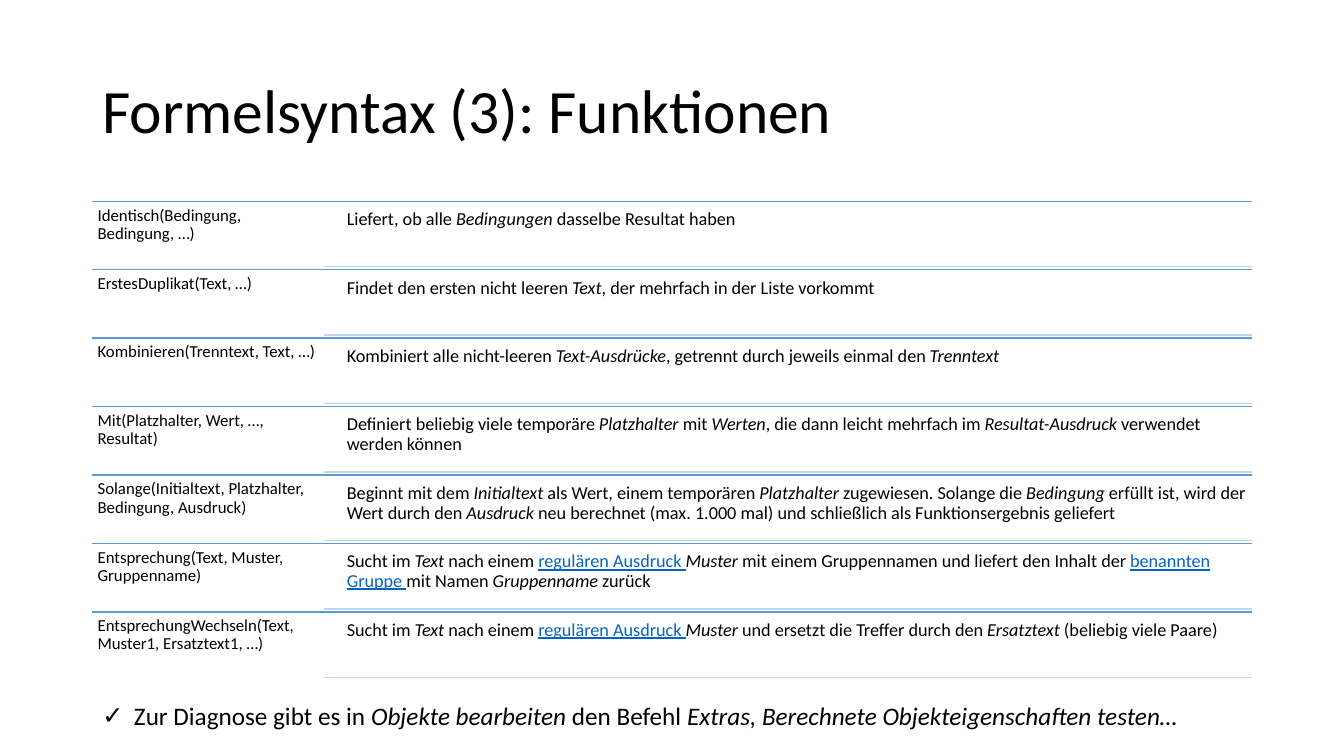
from lxml.etree import SubElement
from pptx import Presentation
from pptx.dml.color import RGBColor
from pptx.enum.shapes import MSO_CONNECTOR
from pptx.enum.text import MSO_ANCHOR, MSO_AUTO_SIZE, PP_ALIGN
from pptx.oxml.ns import qn
from pptx.util import Pt

# Content: "|" parts the runs, a leading "*" is italic, a leading "_" a link
TITLE = "Formelsyntax (3): Funktionen"
ROWS = [
    ("Identisch(Bedingung, Bedingung, …)",
     "Liefert, ob alle |*Bedingungen| dasselbe Resultat haben"),
    ("ErstesDuplikat(Text, …)",
     "Findet den ersten nicht leeren |*Text|, der mehrfach in der Liste vorkommt"),
    ("Kombinieren(Trenntext, Text, …)",
     "Kombiniert alle nicht-leeren |*Text-Ausdrücke|, getrennt durch jeweils "
     "einmal den |*Trenntext"),
    ("Mit(Platzhalter, Wert, …, Resultat)",
     "Definiert beliebig viele temporäre |*Platzhalter| mit |*Werten|, die dann "
     "leicht mehrfach im |*Resultat-Ausdruck| verwendet werden können"),
    ("Solange(Initialtext, Platzhalter, Bedingung, Ausdruck)",
     "Beginnt mit dem |*Initialtext| als Wert, einem temporären |*Platzhalter"
     "| zugewiesen. Solange die |*Bedingung| erfüllt ist, wird der Wert durch den "
     "|*Ausdruck| neu berechnet (max. 1.000 mal) und schließlich als "
     "Funktionsergebnis geliefert"),
    ("Entsprechung(Text, Muster, Gruppenname)",
     "Sucht im |*Text| nach einem |_regulären Ausdruck |*Muster |mit einem "
     "Gruppennamen und liefert den Inhalt der |_benannten Gruppe |mit Namen "
     "|*Gruppenname |zurück"),
    ("EntsprechungWechseln(Text, Muster1, Ersatztext1, …)",
     "Sucht im |*Text| nach einem |_regulären Ausdruck |*Muster| und ersetzt die "
     "Treffer durch den |*Ersatztext| (beliebig viele Paare)"),
]
HINT = ("Zur Diagnose gibt es in |*Objekte bearbeiten| den Befehl "
        "|*Extras, Berechnete Objekteigenschaften testen…")

# Format
COLORS = {"text": "000000", "link": "0563C1", "rule": "5B9BD5", "thin": "C4D5EB"}
STYLES = {"*": {"italic": True}, "_": {"underline": True}}
CELL = {"word_wrap": True, "margin_left": Pt(3.75), "margin_right": Pt(3.75),
        "margin_top": Pt(3.75), "margin_bottom": Pt(3.75)}

# Layout in points
LEFT, RIGHT, TOP, PITCH = 66, 894, 143.75, 48.9
SPLIT, INDENT = 231.6, 244
PAD, THIN = 2.4, 46.7


def color(name):
    return RGBColor.from_string(COLORS[name])


def apply(item, values):
    for key, value in values.items():
        setattr(item, key, value)


def place(shape, x, y, w, h):
    apply(shape, {"left": Pt(x), "top": Pt(y), "width": Pt(w), "height": Pt(h)})


def write(para, text, size):
    for part in text.split("|"):
        mark = part[:1] if part[:1] in STYLES else ""
        run = para.add_run()
        run.text = part[len(mark):]
        apply(run.font, {"name": "Calibri", "size": Pt(size), **STYLES.get(mark, {})})
        run.font.color.rgb = color("link" if mark == "_" else "text")


def add_cell(x, y, w, h, text, size):
    frame = slide.shapes.add_textbox(Pt(x), Pt(y), Pt(w), Pt(h)).text_frame
    apply(frame, CELL)
    para = frame.paragraphs[0]
    para.line_spacing = 0.9
    write(para, text, size)


def add_rule(x, y, name):
    line = slide.shapes.add_connector(
        MSO_CONNECTOR.STRAIGHT, Pt(x), Pt(y), Pt(RIGHT), Pt(y))
    line.line.color.rgb = color(name)
    line.line.width = Pt(1)
    SubElement(line._element.spPr, qn("a:effectLst"))


deck = Presentation()
apply(deck, {"slide_width": Pt(960), "slide_height": Pt(540)})
slide = deck.slides.add_slide(deck.slide_layouts[1])
title, body = slide.placeholders

# Title
place(title, LEFT, 28.75, RIGHT - LEFT, 104.4)
apply(title.text_frame, {"vertical_anchor": MSO_ANCHOR.MIDDLE, "word_wrap": True,
                         "auto_size": MSO_AUTO_SIZE.NONE})
para = title.text_frame.paragraphs[0]
apply(para, {"alignment": PP_ALIGN.LEFT, "line_spacing": 0.9})
write(para, TITLE, 44)

# Hint with check mark
place(body, LEFT, 496.8, RIGHT - LEFT, 29)
apply(body.text_frame, {"vertical_anchor": MSO_ANCHOR.TOP, "word_wrap": True,
                        "auto_size": MSO_AUTO_SIZE.SHAPE_TO_FIT_TEXT})
para = body.text_frame.paragraphs[0]
props = para._p.get_or_add_pPr()
props.set("marL", str(Pt(22.5)))
props.set("indent", str(-Pt(22.5)))
SubElement(props, qn("a:buFont")).set("typeface", "Calibri")
SubElement(props, qn("a:buChar")).set("char", "✓")
para.space_before = Pt(0)
write(para, HINT, 18)

# Function list
for row, (name, note) in enumerate(ROWS):
    y = TOP + row * PITCH
    add_rule(LEFT, y, "rule")
    add_cell(LEFT, y, SPLIT - LEFT, PITCH, name, 12)
    add_cell(INDENT, y + PAD, RIGHT - INDENT, THIN - PAD, note, 13)
    add_rule(SPLIT, y + THIN, "thin")

deck.save("out.pptx")
